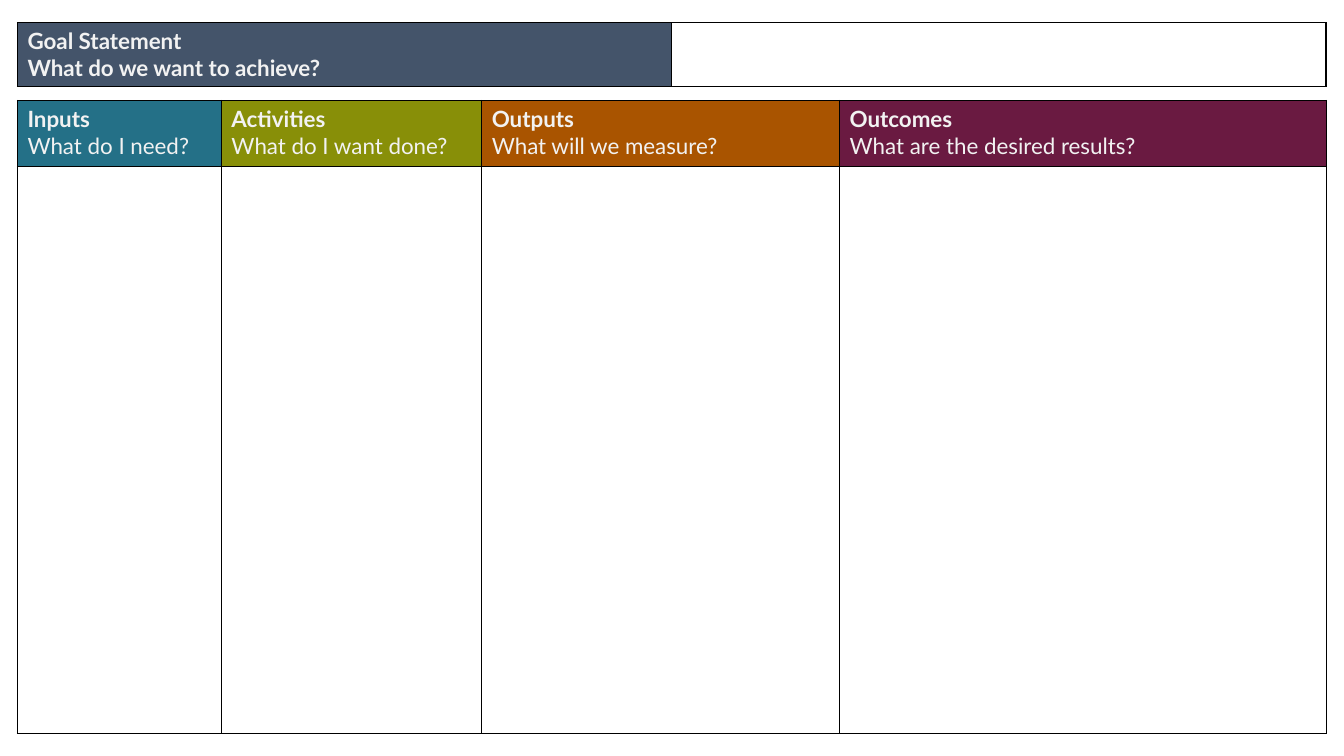
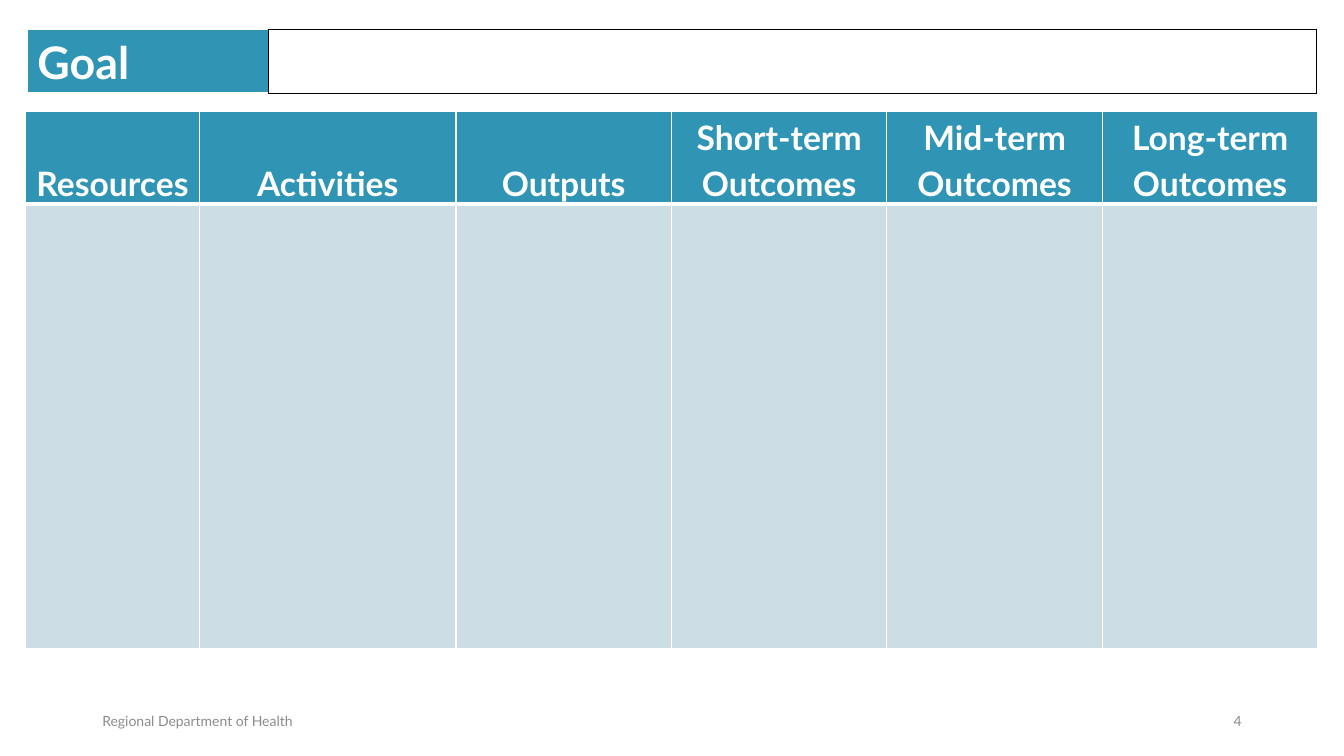
from lxml import etree
from pptx import Presentation
from pptx.dml.color import RGBColor
from pptx.enum import text
from pptx.oxml import ns
from pptx.util import Cm, Pt

FONT = "Lato"
BLACK = RGBColor(0x00, 0x00, 0x00)
WHITE = RGBColor(0xFF, 0xFF, 0xFF)
PALE = RGBColor(0xF2, 0xF2, 0xF2)
GRAY = RGBColor(0x8C, 0x8C, 0x8C)
SLATE = RGBColor(0x44, 0x54, 0x6A)
TEAL = RGBColor(0x24, 0x70, 0x87)
OLIVE = RGBColor(0x88, 0x8F, 0x08)
RUST = RGBColor(0xA9, 0x54, 0x00)
PLUM = RGBColor(0x6A, 0x1A, 0x41)
BLUE = RGBColor(0x30, 0x95, 0xB4)
MIST = RGBColor(0xCD, 0xDD, 0xE5)

BOX = [(BLACK, 1)] * 4
GRID = [(WHITE, 1)] * 4
HEAD = [(WHITE, 1), (WHITE, 1), (WHITE, 1), (WHITE, 3)]
GOAL = [(WHITE, 1), (BLACK, 1), (WHITE, 1), (WHITE, 3)]


def add_grid(slide, left, top, cols, rows):
    frame = slide.shapes.add_table(
        len(rows), len(cols), Cm(left), Cm(top), Cm(sum(cols)), Cm(sum(rows)))
    table = frame.table
    table.first_row = table.horz_banding = False
    for col, width in zip(table.columns, cols):
        col.width = Cm(width)
    for row, height in zip(table.rows, rows):
        row.height = Cm(height)
    return table


def set_cell(cell, edges, fill=None, words="", size=16, color=PALE):
    props = cell._tc.get_or_add_tcPr()
    for side, (tint, width) in zip("LRTB", edges):
        line = etree.SubElement(props, ns.qn(f"a:ln{side}"), w=str(Pt(width)))
        solid = etree.SubElement(line, ns.qn("a:solidFill"))
        etree.SubElement(solid, ns.qn("a:srgbClr"), val=str(tint))
    if fill is None:
        cell.fill.background()
    else:
        cell.fill.solid()
        cell.fill.fore_color.rgb = fill
    cell.text_frame.text = words
    for para in cell.text_frame.paragraphs:
        for run in para.runs:
            run.font.name = FONT
            run.font.size = Pt(size)
            run.font.bold = True
            run.font.color.rgb = color


prs = Presentation()
prs.slide_width, prs.slide_height = Cm(33.87), Cm(19.05)
blank = prs.slide_layouts[6]

slide = prs.slides.add_slide(blank)
goal = add_grid(slide, 0.44, 0.57, [16.49, 16.49], [1.61])
set_cell(goal.cell(0, 0), BOX, SLATE, "Goal Statement\nWhat do we want to achieve?")
set_cell(goal.cell(0, 1), BOX)

model = add_grid(slide, 0.44, 2.53, [5.14, 6.56, 9.02, 12.26], [1.67, 14.28])
heads = [
    ("Inputs", "What do I need?", TEAL),
    ("Activities", "What do I want done?", OLIVE),
    ("Outputs", "What will we measure?", RUST),
    ("Outcomes", "What are the desired results?", PLUM),
]
for col, (name, ask, fill) in enumerate(heads):
    cell = model.cell(0, col)
    set_cell(cell, BOX, fill, f"{name}\n{ask}")
    cell.text_frame.paragraphs[1].runs[0].font.bold = False
    set_cell(model.cell(1, col), BOX)

slide = prs.slides.add_slide(blank)
goal = add_grid(slide, 0.69, 0.75, [6.07, 26.42], [1.61])
set_cell(goal.cell(0, 0), GOAL, BLUE, "Goal", 32, WHITE)
set_cell(goal.cell(0, 1), BOX)

model = add_grid(slide, 0.64, 2.8, [4.39, 6.46] + [5.43] * 4, [2.32, 11.2])
heads = ["Resources", "Activities", "Outputs", "Short-term Outcomes",
         "Mid-term Outcomes", "Long-term Outcomes"]
for col, name in enumerate(heads):
    cell = model.cell(0, col)
    set_cell(cell, HEAD, BLUE, name, 24, WHITE)
    cell.vertical_anchor = text.MSO_ANCHOR.BOTTOM
    cell.margin_left = cell.margin_right = Cm(0.18)
    cell.margin_top = cell.margin_bottom = 0
    para = cell.text_frame.paragraphs[0]
    para.alignment = text.PP_ALIGN.CENTER
    para.line_spacing = 1.15
    set_cell(model.cell(1, col), GRID, MIST)

notes = [
    ("Regional Department of Health", 2.33, 11.43, text.PP_ALIGN.LEFT),
    ("4", 23.92, 7.62, text.PP_ALIGN.RIGHT),
]
for words, left, width, align in notes:
    frame = slide.shapes.add_textbox(Cm(left), Cm(17.66), Cm(width), Cm(1.01)).text_frame
    frame.word_wrap = True
    frame.vertical_anchor = text.MSO_ANCHOR.MIDDLE
    frame.text = words
    para = frame.paragraphs[0]
    para.alignment = align
    font = para.runs[0].font
    font.name, font.size = FONT, Pt(10)
    font.color.rgb = GRAY

prs.save("out.pptx")
